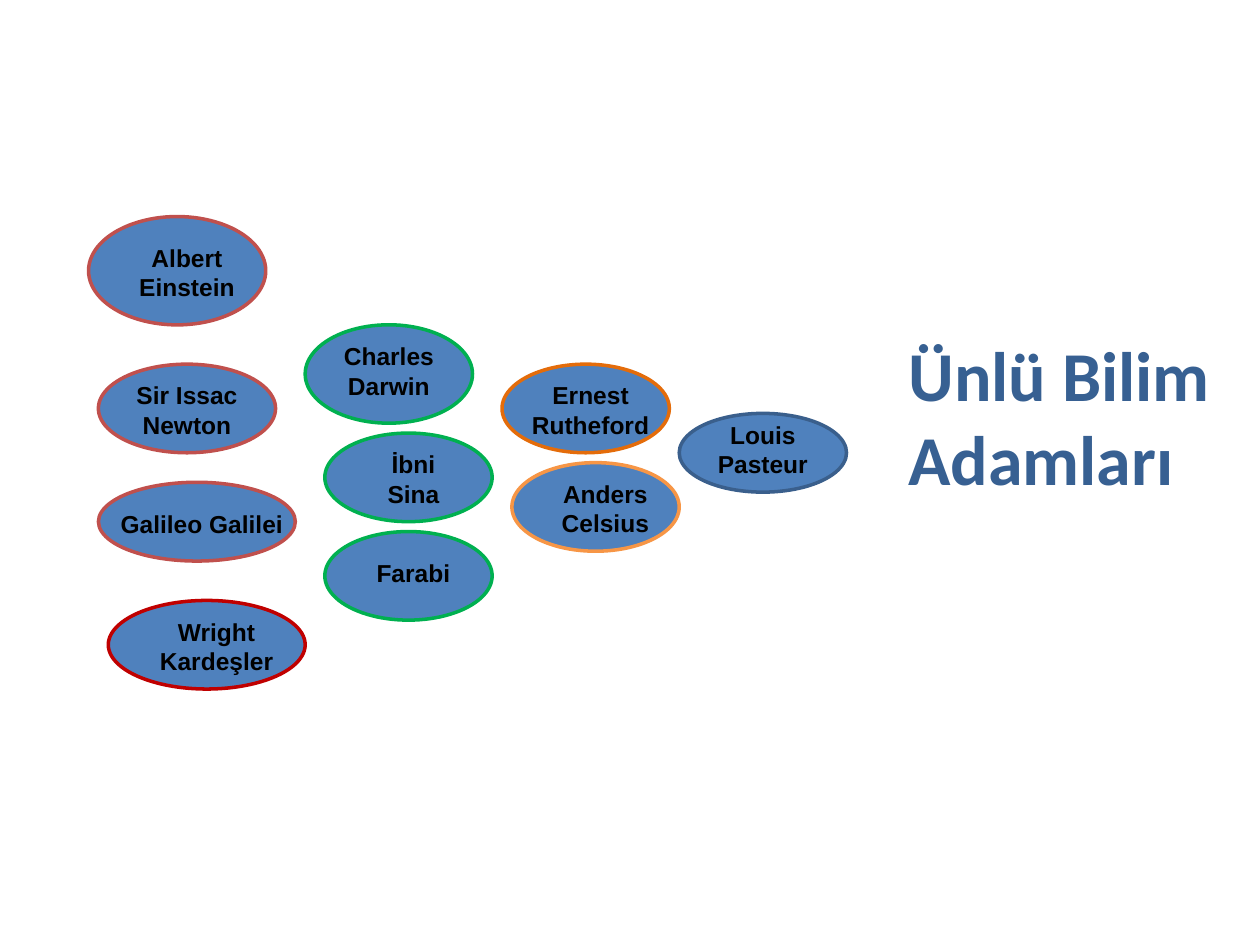
from pptx import Presentation
from pptx.dml.color import RGBColor
from pptx.enum.shapes import MSO_SHAPE as SHAPE
from pptx.enum.text import MSO_ANCHOR as ANCHOR, MSO_AUTO_SIZE as AUTO, PP_ALIGN as ALIGN
from pptx.util import Pt

FILL = RGBColor(0x4F, 0x81, 0xBD)
NAVY = RGBColor(0x37, 0x60, 0x92)
BLACK = RGBColor(0, 0, 0)
RED = RGBColor(0xC0, 0x50, 0x4D)
DARK_RED = RGBColor(0xC0, 0, 0)
GREEN = RGBColor(0, 0xB0, 0x50)
ORANGE = RGBColor(0xE4, 0x6C, 0x0A)
LIGHT_ORANGE = RGBColor(0xF7, 0x96, 0x46)
BLUE = RGBColor(0x3A, 0x5F, 0x8C)

GRID = 45 / 8
ONE_LINE, TWO_LINES = 24.5, 41

# name, outline, oval (left, top, width, height), label (left, top, width), label height
SCIENTISTS = [
    ("Albert Einstein", RED, (9, 22, 18, 11), (12, 24, 14), TWO_LINES),
    ("Charles Darwin", GREEN, (31, 33, 17, 10), (31, 34, 17), TWO_LINES),
    ("Sir Issac Newton", RED, (10, 37, 18, 9), (10, 38, 18), TWO_LINES),
    ("İbni Sina", GREEN, (33, 44, 17, 9), (36, 45, 12), TWO_LINES),
    ("Ernest Rutheford", ORANGE, (51, 37, 17, 9), (51, 38, 18), TWO_LINES),
    ("Farabi", GREEN, (33, 54, 17, 9), (35, 56, 14), ONE_LINE),
    ("Galileo Galilei", RED, (10, 49, 20, 8), (8, 51, 25), ONE_LINE),
    ("Anders Celsius", LIGHT_ORANGE, (52, 47, 17, 9), (52, 48, 19), TWO_LINES),
    ("Louis Pasteur", BLUE, (69, 42, 17, 8), (69, 42, 17), TWO_LINES),
    ("Wright Kardeşler", DARK_RED, (11, 61, 20, 9), (13, 62, 18), TWO_LINES),
]


def grid(*units):
    """Turn grid units into lengths."""
    return [Pt(u * GRID) for u in units]


def write(tf, text, size=14, font="Arial", color=BLACK, align=ALIGN.CENTER, anchor=ANCHOR.MIDDLE):
    """Put bold formatted text into a text frame."""
    tf.word_wrap = True
    tf.auto_size = AUTO.NONE
    tf.vertical_anchor = anchor
    p = tf.paragraphs[0]
    p.alignment = align
    r = p.add_run()
    r.text = text
    r.font.name, r.font.size, r.font.bold = font, Pt(size), True
    r.font.color.rgb = color


def add_oval(s, box, outline):
    """Draw a filled oval with a coloured outline."""
    sp = s.shapes.add_shape(SHAPE.OVAL, *grid(*box))
    sp.shadow.inherit = False
    sp.fill.solid()
    sp.fill.fore_color.rgb = FILL
    sp.line.color.rgb = outline
    sp.line.width = Pt(2)


def add_label(s, text, box, height):
    """Add a centred name label."""
    sp = s.shapes.add_textbox(*grid(*box), Pt(height))
    write(sp.text_frame, text)


def add_title(s, text):
    """Place and fill the slide title."""
    sp = s.shapes.title
    sp.left, sp.top, sp.width, sp.height = grid(91, 33, 33.5, 18.5)
    write(sp.text_frame, text, size=40, font="Calibri", color=NAVY,
          align=ALIGN.LEFT, anchor=ANCHOR.TOP)


def main():
    """Build and save the slide."""
    prs = Presentation()
    prs.slide_width, prs.slide_height = Pt(720), Pt(540)
    s = prs.slides.add_slide(prs.slide_layouts[5])
    add_title(s, "Ünlü Bilim Adamları")
    for _, outline, oval, _, _ in SCIENTISTS:
        add_oval(s, oval, outline)
    for name, _, _, label, height in SCIENTISTS:
        add_label(s, name, label, height)
    prs.save("out.pptx")


if __name__ == "__main__":
    main()
